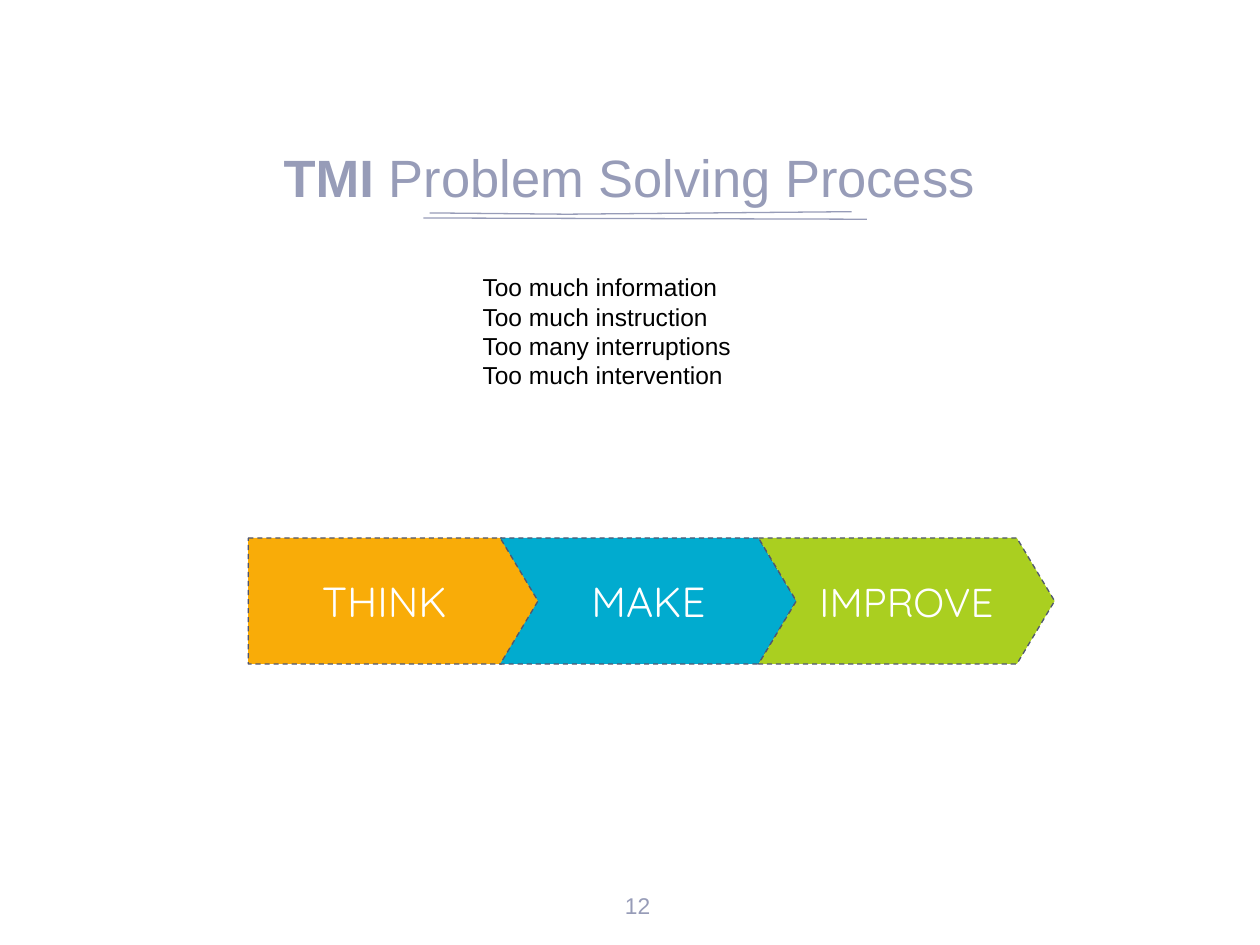
from lxml import etree
from pptx import Presentation
from pptx.dml.color import RGBColor
from pptx.enum.dml import MSO_LINE
from pptx.enum.shapes import MSO_CONNECTOR, MSO_SHAPE
from pptx.enum.text import MSO_ANCHOR, MSO_AUTO_SIZE, PP_ALIGN
from pptx.oxml.ns import qn
from pptx.util import Inches, Pt

DASH = MSO_LINE.DASH
STRAIGHT = MSO_CONNECTOR.STRAIGHT
PENTAGON, CHEVRON = MSO_SHAPE.PENTAGON, MSO_SHAPE.CHEVRON
TOP, MIDDLE, BOTTOM = MSO_ANCHOR.TOP, MSO_ANCHOR.MIDDLE, MSO_ANCHOR.BOTTOM
LEFT, CENTER = PP_ALIGN.LEFT, PP_ALIGN.CENTER

# Content
TITLE = [("TMI ", True), ("Problem Solving Process", False)]
MEANINGS = ["Too much information", "Too much instruction",
            "Too many interruptions", "Too much intervention"]
# label, shape, left, width, fill, type size
STEPS = [("THINK", PENTAGON, 1.97, 2.31, "F9AC08", 24),
         ("MAKE", CHEVRON, 3.97, 2.35, "01ABCF", 24),
         ("IMPROVE", CHEVRON, 6.02, 2.35, "AACF20", 23)]
PAGE_NUMBER = "12"
UPPER_STROKE = [(3.41, 1.69), (4.5, 1.7), (5.65, 1.69), (6.76, 1.68)]
LOWER_STROKE = [(3.36, 1.73), (6.88, 1.74)]

THEME = {
    "font": "Arial", "step_font": "Quicksand",
    "accent": "979CB8", "text": "000000", "outline": "505670", "white": "FFFFFF",
    "title_size": 30, "body_size": 14, "number_size": 13,
    "line": 0.75, "inset": 0.1,
}
STEP_TOP, STEP_HEIGHT, STEP_POINT = 4.27, 1, 0.3


def color(name):
    return RGBColor.from_string(THEME.get(name, name))


def place(shape, left, top, width, height):
    shape.left, shape.top = Inches(left), Inches(top)
    shape.width, shape.height = Inches(width), Inches(height)


def set_frame(shape, anchor):
    frame = shape.text_frame
    frame.word_wrap = True
    frame.auto_size = MSO_AUTO_SIZE.NONE
    frame.vertical_anchor = anchor
    frame.margin_left = frame.margin_right = Inches(THEME["inset"])
    frame.margin_top = frame.margin_bottom = Inches(THEME["inset"])
    return frame


def format_text(frame, size, ink, align, font="font"):
    for para in frame.paragraphs:
        para.alignment = align
        para.space_before = Pt(0)
        for span in para.runs:
            span.font.name = THEME[font]
            span.font.size = Pt(size)
            span.font.color.rgb = color(ink)


def set_line(shape, ink):
    shape.line.color.rgb = color(ink)
    shape.line.width = Pt(THEME["line"])


deck = Presentation()
deck.slide_width, deck.slide_height = Inches(10), Inches(7.5)
page = deck.slides.add_slide(deck.slide_layouts[1])

# Double underline below the title
points = [(Inches(x), Inches(y)) for x, y in UPPER_STROKE]
builder = page.shapes.build_freeform(*points[0])
builder.add_line_segments(points[1:], close=False)
upper = builder.convert_to_shape()
upper.fill.background()
upper.shadow.inherit = False
set_line(upper, "accent")
(start_x, start_y), (end_x, end_y) = LOWER_STROKE
lower = page.shapes.add_connector(STRAIGHT, Inches(start_x), Inches(start_y),
                                  Inches(end_x), Inches(end_y))
set_line(lower, "accent")
etree.SubElement(lower.element.spPr, qn("a:effectLst"))

# Title
title = page.shapes.title
place(title, 1.12, 0.75, 7.75, 1)
frame = set_frame(title, BOTTOM)
for words, bold in TITLE:
    span = frame.paragraphs[0].add_run()
    span.text = words
    span.font.bold = bold
format_text(frame, THEME["title_size"], "accent", CENTER)

# What the letters stand for
body = page.placeholders[1]
place(body, 3.73, 2.06, 4.91, 1.27)
frame = set_frame(body, TOP)
frame.text = "\n".join(MEANINGS)
for para in frame.paragraphs:
    properties = para._p.get_or_add_pPr()
    properties.set("marL", "0")
    properties.set("indent", "0")
    etree.SubElement(properties, qn("a:buNone"))
format_text(frame, THEME["body_size"], "text", LEFT)

# Process steps
for label, kind, left, width, fill, size in STEPS:
    step = page.shapes.add_shape(kind, Inches(left), Inches(STEP_TOP),
                                 Inches(width), Inches(STEP_HEIGHT))
    step.adjustments[0] = STEP_POINT
    step.shadow.inherit = False
    step.fill.solid()
    step.fill.fore_color.rgb = color(fill)
    set_line(step, "outline")
    step.line.dash_style = DASH
    frame = set_frame(step, MIDDLE)
    frame.text = label
    format_text(frame, size, "white", CENTER, "step_font")

# Page number
number = page.shapes.add_textbox(Inches(4.76), Inches(6.98), Inches(0.6), Inches(0.44))
frame = set_frame(number, TOP)
frame.text = PAGE_NUMBER
format_text(frame, THEME["number_size"], "accent", CENTER)

deck.save("out.pptx")
